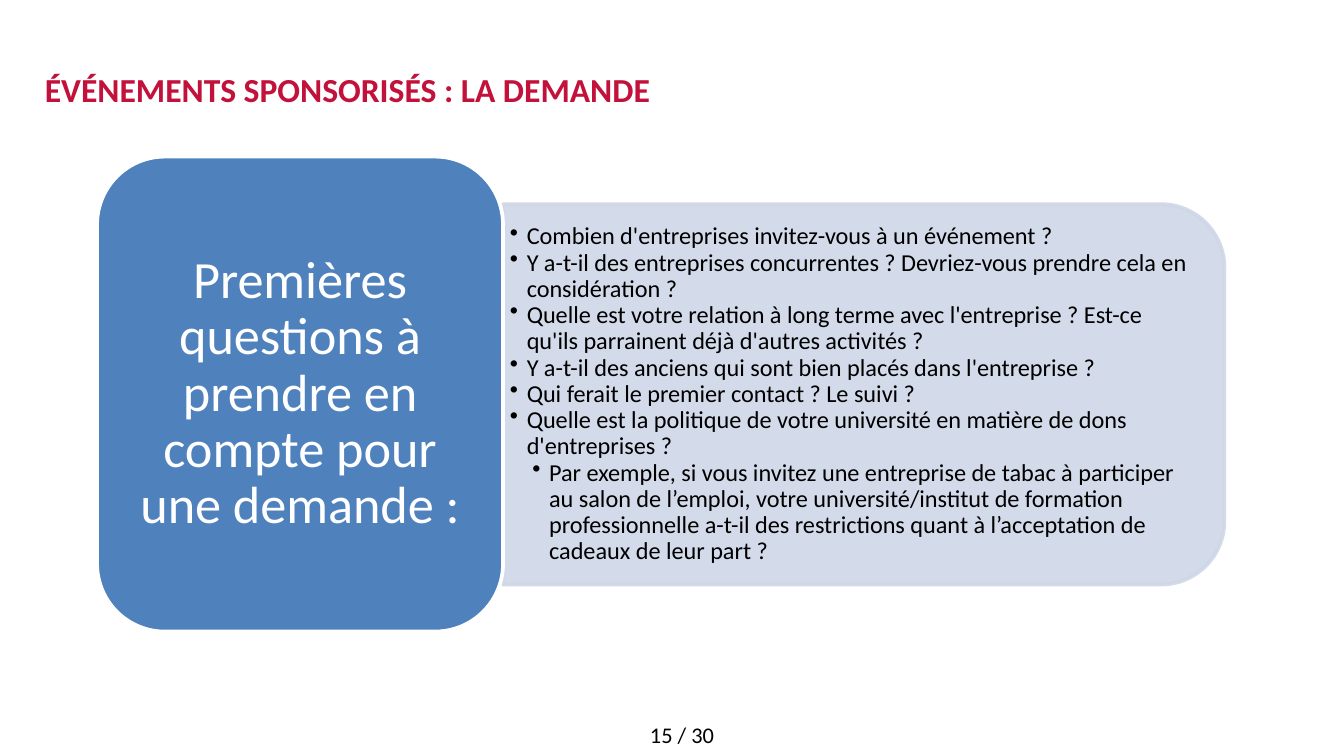
"""Build the slide on the first questions to ask before a sponsorship request."""
from lxml.etree import SubElement
from pptx import Presentation
from pptx.dml.color import RGBColor
from pptx.enum.shapes import MSO_SHAPE as Shape
from pptx.enum.text import MSO_ANCHOR as Anchor, PP_ALIGN as Align
from pptx.oxml.ns import qn
from pptx.util import Pt


def paint(color_format, hex_color, alpha=None):
    color_format.solid()
    color_format.fore_color.rgb = RGBColor.from_string(hex_color)
    if alpha:
        SubElement(color_format._xPr.find(".//" + qn("a:srgbClr")), qn("a:alpha"), val=str(alpha * 1000))


def style(paragraph, size, hex_color, align=None, bold=False):
    paragraph.alignment = align
    for run in paragraph.runs:
        run.font.name = "Calibri"
        run.font.size = Pt(size)
        run.font.bold = bold
        run.font.color.rgb = RGBColor.from_string(hex_color)


questions = [
    (1, "Combien d'entreprises invitez-vous à un événement ?"),
    (1, "Y a-t-il des entreprises concurrentes ? Devriez-vous prendre cela en considération ?"),
    (1, "Quelle est votre relation à long terme avec l'entreprise ? Est-ce qu'ils parrainent déjà d'autres activités ?"),
    (1, "Y a-t-il des anciens qui sont bien placés dans l'entreprise ?"),
    (1, "Qui ferait le premier contact ? Le suivi ?"),
    (1, "Quelle est la politique de votre université en matière de dons d'entreprises ?"),
    (4, "Par exemple, si vous invitez une entreprise de tabac à participer au salon de l’emploi, "
        "votre université/institut de formation professionnelle a-t-il des restrictions quant à "
        "l’acceptation de cadeaux de leur part ?"),
]
indents = {1: 9, 4: 21}

deck = Presentation()
deck.slide_width, deck.slide_height = Pt(720), Pt(405)
slide = deck.slides.add_slide(deck.slide_layouts[5])
shapes = slide.shapes

title = shapes.title
title.left, title.top, title.width, title.height = Pt(24), Pt(21), Pt(672), Pt(54.5)
paint(title.fill, "FFFFFF")
heading = title.text_frame
heading.text = "ÉVÉNEMENTS SPONSORISÉS : LA DEMANDE"
heading.vertical_anchor = Anchor.MIDDLE
heading.margin_left = heading.margin_right = heading.margin_top = heading.margin_bottom = 0
heading.paragraphs[0].line_spacing = Pt(20)
heading.paragraphs[0].space_after = Pt(12)
style(heading.paragraphs[0], 18, "C2113A", Align.JUSTIFY, True)

panel = shapes.add_shape(Shape.ROUND_2_SAME_RECTANGLE, Pt(360.7), Pt(18), Pt(203.8), Pt(386.6))
panel.rotation = 90
panel.adjustments[0], panel.adjustments[1] = 0.167, 0
panel.shadow.inherit = False
paint(panel.fill, "CFD7E7", 90)
paint(panel.line.fill, "CFD7E7", 90)
panel.line.width = Pt(2)

question_box = shapes.add_textbox(Pt(269.3), Pt(119.5), Pt(376.6), Pt(183.6))
question_list = question_box.text_frame
question_list.word_wrap = True
question_list.vertical_anchor = Anchor.MIDDLE
question_list.margin_left = question_list.margin_right = Pt(3.9)
question_list.margin_top = question_list.margin_bottom = Pt(2)
question_list.text = "\n".join(text for _, text in questions)
for (level, _), question in zip(questions, question_list.paragraphs):
    question.level = level
    question.line_spacing = 0.9
    properties = question._p.get_or_add_pPr()
    properties.set("marL", str(Pt(indents[level])))
    properties.set("indent", str(-Pt(9)))
    SubElement(SubElement(properties, qn("a:buClr")), qn("a:srgbClr"), val="000000")
    SubElement(properties, qn("a:buChar"), char="•")
    style(question, 13, "000000", Align.LEFT)

card = shapes.add_shape(Shape.ROUNDED_RECTANGLE, Pt(52), Pt(83.9), Pt(217.5), Pt(254.5))
card.adjustments[0] = 0.167
card.shadow.inherit = False
paint(card.fill, "4F81BD")
paint(card.line.fill, "FFFFFF")
card.line.width = Pt(2)
prompt = card.text_frame
prompt.word_wrap = True
prompt.vertical_anchor = Anchor.MIDDLE
prompt.margin_left = prompt.margin_right = Pt(8.4)
prompt.margin_top = prompt.margin_bottom = Pt(4.2)
prompt.text = "Premières questions à prendre en compte pour une demande :"
prompt.paragraphs[0].line_spacing = 0.9
style(prompt.paragraphs[0], 28, "FFFFFF", Align.CENTER)

page_box = shapes.add_textbox(Pt(315.4), Pt(383), Pt(100), Pt(22))
page_number = page_box.text_frame
page_number.word_wrap = True
page_number.text = "15 / 30"
style(page_number.paragraphs[0], 12, "000000", Align.CENTER)

deck.save("out.pptx")
